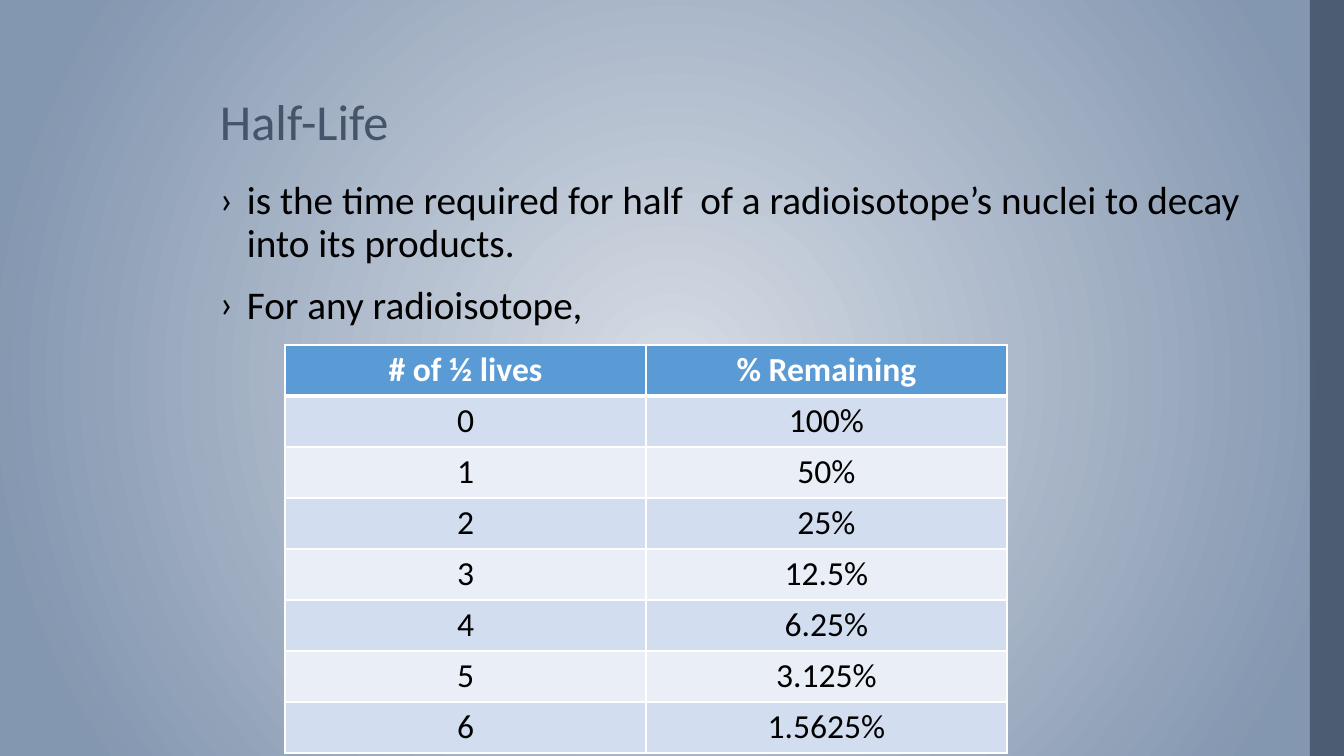
"""Builds the Half-Life slide with its definition and decay table."""
from dataclasses import dataclass

from lxml.etree import SubElement
from pptx import Presentation
from pptx.dml.color import RGBColor
from pptx.enum.shapes import MSO_SHAPE
from pptx.enum.text import MSO_ANCHOR, PP_ALIGN
from pptx.oxml import parse_xml
from pptx.oxml.ns import nsdecls, qn
from pptx.util import Pt

EMU_PER_PX = 914400 / 100.8
SLIDE_WIDTH, SLIDE_HEIGHT = 1344, 756
POINTS = (
    "is the time required for half  of a radioisotope’s nuclei to decay into its products.",
    "For any radioisotope,",
)
DECAY = (
    ("# of ½ lives", "% Remaining"),
    ("0", "100%"),
    ("1", "50%"),
    ("2", "25%"),
    ("3", "12.5%"),
    ("4", "6.25%"),
    ("5", "3.125%"),
    ("6", "1.5625%"),
)


@dataclass(frozen=True)
class Theme:
    """Colours, font and type sizes of the slide."""

    face: str = "Calibri"
    title_size: int = 36
    body_size: int = 28
    table_size: int = 24
    slate: str = "44546A"
    ink: str = "000000"
    white: str = "FFFFFF"
    header: str = "5B9BD5"
    bands: tuple = ("EAEFF7", "D2DEEF")
    glow: str = "D6DCE5"
    edge: str = "8497B0"


THEME = Theme()


def px(length):
    """Turn pixels into EMU."""
    return round(length * EMU_PER_PX)


def box(*lengths):
    """Turn left, top, width and height into EMU."""
    return [px(length) for length in lengths]


def set_font(paragraph, size, color, bold=False):
    """Set the font of a whole paragraph."""
    font = paragraph.font
    font.name = THEME.face
    font.size = Pt(size)
    font.bold = bold
    font.color.rgb = RGBColor.from_string(color)


def paint_background(slide):
    """Fill the background with a circular gradient."""
    slide.background.fill.solid()
    solid = next(slide.element.iter(qn("a:solidFill")))
    gradient = parse_xml(
        f'<a:gradFill {nsdecls("a")} rotWithShape="1"><a:gsLst>'
        f'<a:gs pos="0"><a:srgbClr val="{THEME.glow}"/></a:gs>'
        f'<a:gs pos="90000"><a:srgbClr val="{THEME.edge}"/></a:gs></a:gsLst>'
        '<a:path path="circle"><a:fillToRect l="50000" t="50000" r="50000" b="50000"/>'
        "</a:path></a:gradFill>"
    )
    solid.getparent().replace(solid, gradient)


def add_side_bar(slide, left, width):
    """Add the translucent bar along the right edge."""
    bar = slide.shapes.add_shape(MSO_SHAPE.RECTANGLE, *box(left, 0, width, SLIDE_HEIGHT))
    bar.shadow.inherit = False
    bar.line.fill.background()
    bar.fill.solid()
    bar.fill.fore_color.rgb = RGBColor.from_string(THEME.slate)
    tint = next(bar.fill._xPr.iter(qn("a:srgbClr")))
    SubElement(tint, qn("a:alpha"), val="87000")


def add_text(slide, place, texts, size, color, anchor=MSO_ANCHOR.TOP, bullet=None):
    """Add a text box with one paragraph per text."""
    frame = slide.shapes.add_textbox(*box(*place)).text_frame
    frame.word_wrap = True
    frame.vertical_anchor = anchor
    for index, text in enumerate(texts):
        paragraph = frame.add_paragraph() if index else frame.paragraphs[0]
        paragraph.text = text
        if bullet:
            properties = paragraph._p.get_or_add_pPr()
            properties.set("marL", str(px(27)))
            properties.set("indent", str(-px(27)))
            SubElement(properties, qn("a:buFont"), typeface=THEME.face)
            SubElement(properties, qn("a:buChar"), char=bullet)
        paragraph.line_spacing = 0.9
        if index:
            paragraph.space_before = Pt(14)
        set_font(paragraph, size, color)


def style_cell(cell, text, fill, color, is_header):
    """Write one table cell with its borders and fill."""
    properties = cell._tc.get_or_add_tcPr()
    for side in "LRTB":
        width = Pt(3 if is_header and side == "B" else 1)
        border = SubElement(properties, qn(f"a:ln{side}"), w=str(width))
        paint = SubElement(border, qn("a:solidFill"))
        SubElement(paint, qn("a:srgbClr"), val=THEME.white)
    cell.fill.solid()
    cell.fill.fore_color.rgb = RGBColor.from_string(fill)
    cell.text = text
    paragraph = cell.text_frame.paragraphs[0]
    paragraph.alignment = PP_ALIGN.CENTER
    set_font(paragraph, THEME.table_size, color, is_header)


def add_decay_table(slide, left, top, column_width, row_height):
    """Add the table of remaining share per half-life."""
    rows, columns = len(DECAY), len(DECAY[0])
    place = box(left, top, columns * column_width, rows * row_height)
    decay = slide.shapes.add_table(rows, columns, *place).table
    decay.horz_banding = False
    for row, values in enumerate(DECAY):
        is_header = row == 0
        fill = THEME.header if is_header else THEME.bands[row % 2]
        color = THEME.white if is_header else THEME.ink
        for column, value in enumerate(values):
            style_cell(decay.cell(row, column), value, fill, color, is_header)


def main():
    """Build and save the slide."""
    deck = Presentation()
    deck.slide_width, deck.slide_height = px(SLIDE_WIDTH), px(SLIDE_HEIGHT)
    slide = deck.slides.add_slide(deck.slide_layouts[6])
    paint_background(slide)
    add_side_bar(slide, 1310, 34)
    add_text(slide, (210, 19, 1044, 137), ["Half-Life"], THEME.title_size, THEME.slate,
             anchor=MSO_ANCHOR.BOTTOM)
    add_text(slide, (210, 176, 1044, 504), POINTS, THEME.body_size, THEME.ink, bullet="›")
    add_decay_table(slide, 285, 345, 361, 51)
    deck.save("out.pptx")


if __name__ == "__main__":
    main()
